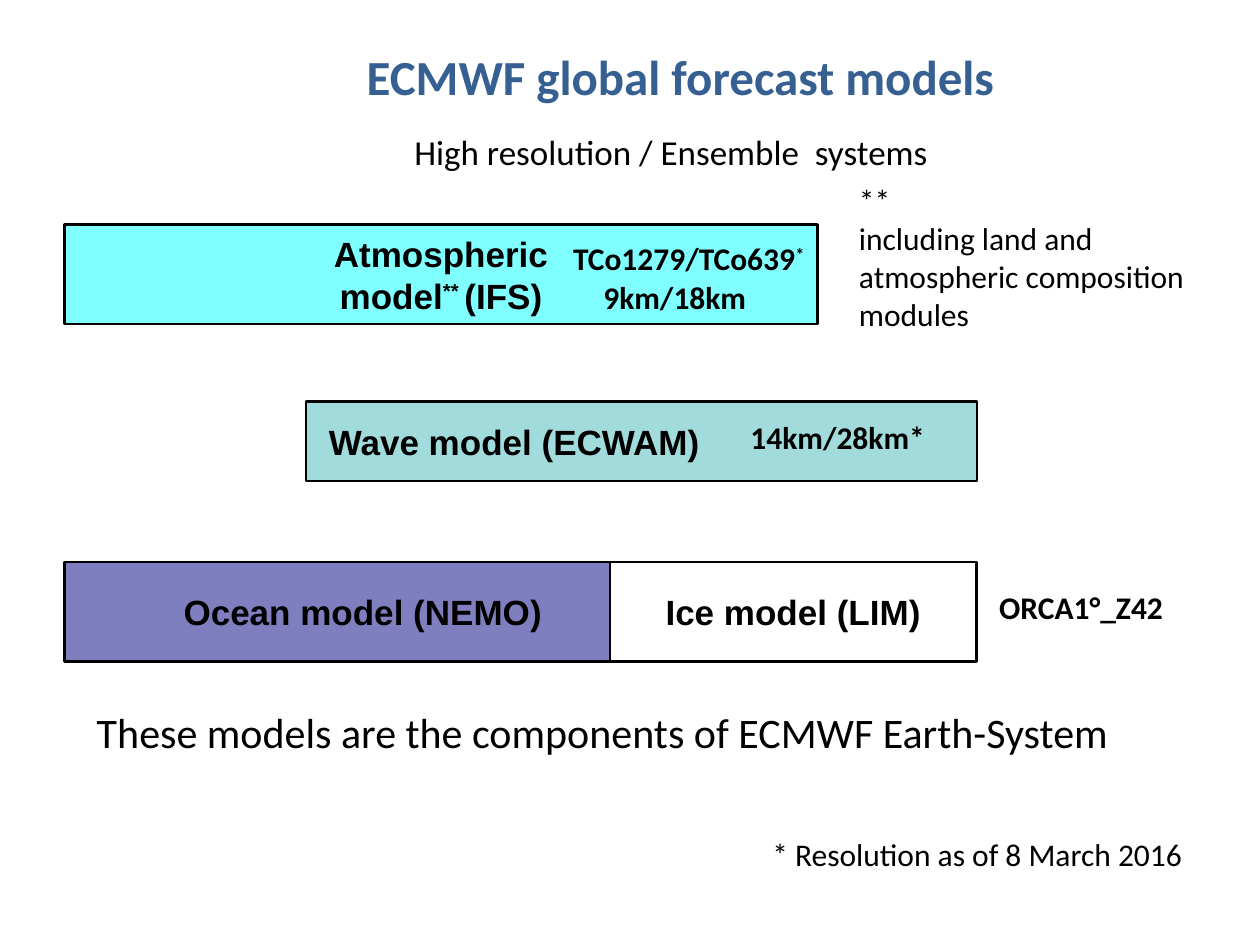
from lxml.etree import SubElement
from pptx import Presentation
from pptx.dml.color import RGBColor
from pptx.enum.shapes import MSO_SHAPE
from pptx.enum.text import MSO_ANCHOR, PP_ALIGN
from pptx.oxml.ns import qn
from pptx.util import Pt


def color(hex_value):
    return RGBColor.from_string(hex_value)


def paint(shape, hex_value, opacity=100):
    shape.fill.solid()
    shape.fill.fore_color.rgb = color(hex_value)
    if opacity < 100:
        tint = shape.fill._xPr.find(qn("a:solidFill"))[0]
        SubElement(tint, qn("a:alpha"), val=str(opacity * 1000))


def write(frame, text, size, font="Calibri", hex_value="000000", bold=False,
          align=PP_ALIGN.LEFT, raised="", ending=""):
    frame.text = text
    last = frame.paragraphs[-1]
    for part, baseline in ((raised, "30000"), (ending, "0")):
        if part:
            run = last.add_run()
            run.text = part
            run.font._element.set("baseline", baseline)
    for paragraph in frame.paragraphs:
        paragraph.alignment = align
        for run in paragraph.runs:
            run.font.size = Pt(size)
            run.font.name = font
            run.font.bold = bold
            run.font.color.rgb = color(hex_value)


def add_label(slide, left, top, width, height, text, size=18, wrap=False, **style):
    label = slide.shapes.add_textbox(Pt(left), Pt(top), Pt(width), Pt(height))
    label.text_frame.word_wrap = wrap
    write(label.text_frame, text, size, **style)
    return label


def add_model(slide, left, top, width, height, text, fill, opacity=50,
              align=PP_ALIGN.CENTER, **style):
    model = slide.shapes.add_shape(
        MSO_SHAPE.RECTANGLE, Pt(left), Pt(top), Pt(width), Pt(height))
    model.shadow.inherit = False
    paint(model, fill, opacity)
    model.line.color.rgb = color("000000")
    model.line.width = Pt(1.5)
    frame = model.text_frame
    frame.word_wrap = True
    frame.vertical_anchor = MSO_ANCHOR.MIDDLE
    if align == PP_ALIGN.LEFT:
        frame.margin_left = Pt(13)
    write(frame, text, 20, font="Arial", bold=True, align=align, **style)


def add_heading(slide, left, top, width):
    title = add_label(slide, left, top, width, 45.4, "ECMWF global forecast models",
                      28, wrap=True, hex_value="376092", bold=True,
                      align=PP_ALIGN.CENTER)
    title.text_frame.vertical_anchor = MSO_ANCHOR.MIDDLE
    add_label(slide, left + 73.5, top + 50.4, 311, 31.7,
              "High resolution / Ensemble  systems", 20)


def add_atmosphere(slide, left, top, width, height):
    add_model(slide, left, top, width, height, "Atmospheric\vmodel", "00FFFF",
              raised="** ", ending="(IFS)")
    add_label(slide, left + 283.7, top + 5, 148.3, 28.8, "TCo1279/TCo639",
              bold=True, raised="*")
    add_label(slide, left + 301, top + 27.3, 97.2, 28.8, "9km/18km", bold=True)
    add_label(slide, left + width + 16.5, top - 28.1, 206.6, 94.3,
              "**\nincluding land and\natmospheric composition\nmodules")


def add_wave(slide, left, top, width, height):
    add_model(slide, left, top, width, height, "Wave model (ECWAM)", "47B8B8",
              align=PP_ALIGN.LEFT)
    add_label(slide, left + 246.9, top + 5.7, 115.2, 28.8, "14km/28km*", bold=True)


def add_ocean_and_ice(slide, left, top, width, height):
    ice_width = 209.5
    add_model(slide, left, top, 341.3, height, "Ocean model (NEMO)", "000080")
    add_model(slide, left + width - ice_width, top, ice_width, height,
              "Ice model (LIM)", "FFFFFF", opacity=100)
    resolution = add_label(slide, left + width + 5.8, top + 11.5, 108.7, 28.8,
                           "ORCA1°_Z42", bold=True)
    paint(resolution, "FFFFFF")


def add_closing(slide, left, top, width):
    add_label(slide, left, top, width, 36,
              "These models are the components of ECMWF Earth-System", 24)
    add_label(slide, left + 386, top + 73.5, 251.3, 28.8,
              "* Resolution as of 8 March 2016")


def main():
    presentation = Presentation()
    presentation.slide_width = Pt(720)
    presentation.slide_height = Pt(540)
    slide = presentation.slides.add_slide(presentation.slide_layouts[6])
    add_ocean_and_ice(slide, 36.7, 321.1, 521.3, 56.9)
    add_wave(slide, 174.9, 229.6, 383.4, 45.4)
    add_atmosphere(slide, 36.7, 128.2, 430.6, 56.9)
    add_heading(slide, 156.2, 20.9, 465.1)
    add_closing(slide, 48.2, 400.3, 603.4)
    presentation.save("out.pptx")


if __name__ == "__main__":
    main()
